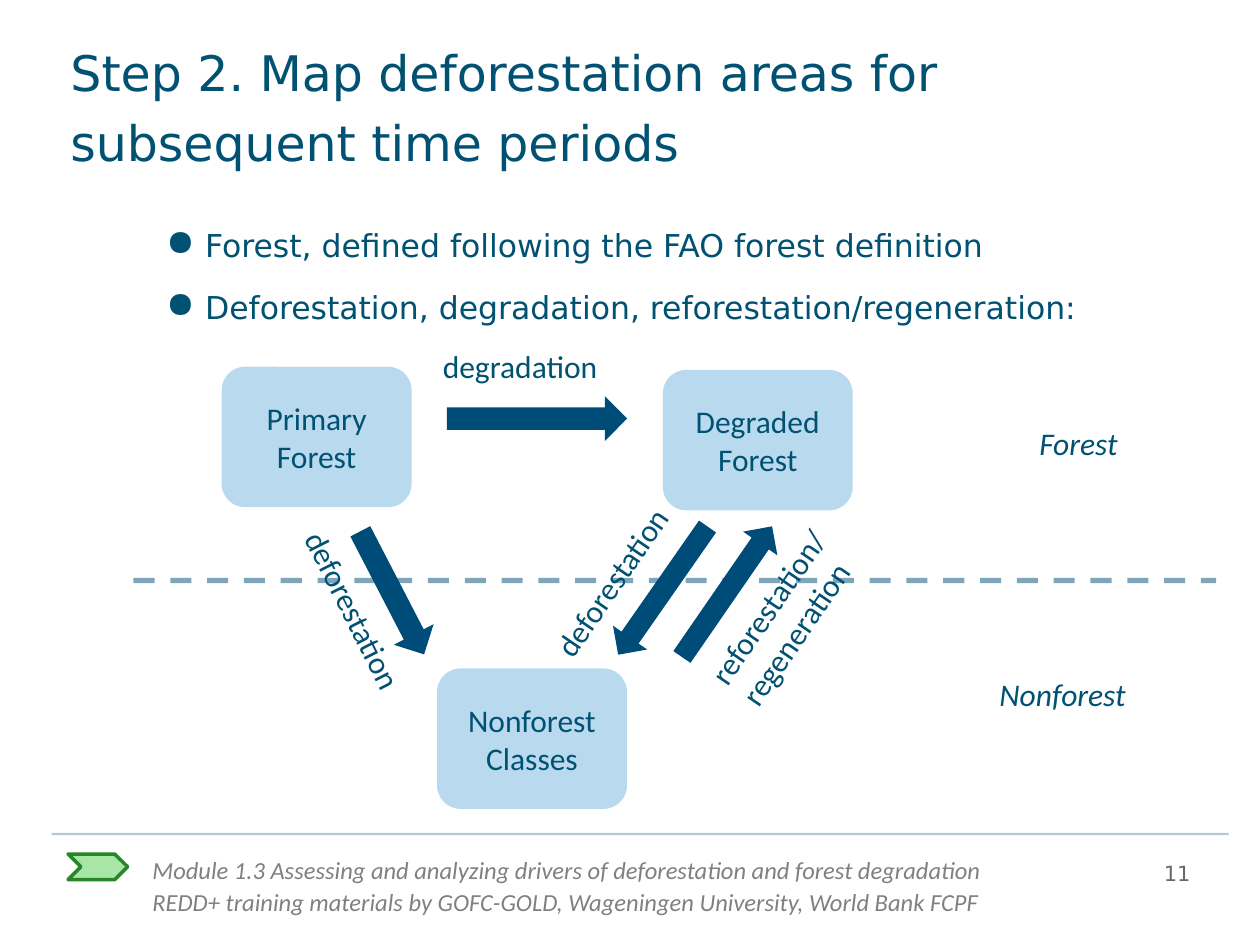
from lxml.etree import SubElement
from pptx import Presentation
from pptx.dml.color import RGBColor
from pptx.enum.dml import MSO_LINE_DASH_STYLE as Dash
from pptx.enum.shapes import MSO_CONNECTOR as Connector, MSO_SHAPE as Shape
from pptx.enum.text import MSO_ANCHOR as Anchor, MSO_AUTO_SIZE as AutoSize, PP_ALIGN as Align
from pptx.oxml.ns import qn
from pptx.util import Pt

TEAL = "005172"
NAVY = "004C78"
SKY = "B9D9EF"
SANS = "DejaVu Sans"


def color(value):
    return RGBColor.from_string(value)


def add_bullet(p, indent, hanging):
    pPr = p._p.get_or_add_pPr()
    pPr.set("marL", str(Pt(indent)))
    pPr.set("indent", str(-Pt(hanging)))
    clr = SubElement(pPr, qn("a:buClr"))
    SubElement(clr, qn("a:srgbClr"), val=TEAL)
    SubElement(pPr, qn("a:buSzPct"), val="115000")
    SubElement(pPr, qn("a:buChar"), char="●")


def write(tf, lines, size=18, font="Calibri", fill=TEAL, italic=False,
          align=Align.LEFT, leading=None, gap=0, bullet=False):
    for i, line in enumerate(lines):
        p = tf.add_paragraph() if i else tf.paragraphs[0]
        p.text = line
        p.alignment = align
        if leading:
            p.line_spacing = Pt(leading)
        if i and gap:
            p.space_before = Pt(gap)
        if bullet:
            add_bullet(p, 77, 22.3)
        for r in p.runs:
            r.font.size = Pt(size)
            r.font.name = font
            r.font.italic = italic
            r.font.color.rgb = color(fill)


def add_text(s, lines, x, y, w, h, wrap=True, rotation=0,
             margins=(7.2, 3.6, 7.2, 3.6), **fmt):
    sp = s.shapes.add_textbox(Pt(x), Pt(y), Pt(w), Pt(h))
    sp.rotation = rotation
    tf = sp.text_frame
    tf.word_wrap = wrap
    tf.auto_size = AutoSize.NONE if wrap else AutoSize.SHAPE_TO_FIT_TEXT
    tf.margin_left, tf.margin_top, tf.margin_right, tf.margin_bottom = map(Pt, margins)
    write(tf, lines, **fmt)


def add_shape(s, kind, x, y, w, h, fill, rotation=0, outline=None):
    sp = s.shapes.add_shape(kind, Pt(x), Pt(y), Pt(w), Pt(h))
    sp.shadow.inherit = False
    sp.rotation = rotation
    sp.fill.solid()
    sp.fill.fore_color.rgb = color(fill)
    if outline:
        sp.line.color.rgb = color(outline)
        sp.line.width = Pt(2)
    else:
        sp.line.fill.background()
    return sp


def add_class_box(s, label, x, y):
    tf = add_shape(s, Shape.ROUNDED_RECTANGLE, x, y, 108.5, 80.2, SKY).text_frame
    tf.word_wrap = True
    tf.vertical_anchor = Anchor.MIDDLE
    write(tf, [label], align=Align.CENTER)


def add_rule(s, x1, x2, y, fill, width, opacity, dash=Dash.SOLID):
    line = s.shapes.add_connector(Connector.STRAIGHT, Pt(x1), Pt(y), Pt(x2), Pt(y))
    line.line.color.rgb = color(fill)
    line.line.width = Pt(width)
    line.line.dash_style = dash
    clr = line.line._ln.find(".//" + qn("a:srgbClr"))
    SubElement(clr, qn("a:alpha"), val=str(opacity * 1000))
    SubElement(line._element.spPr, qn("a:effectLst"))


def add_footer(s):
    add_text(s, ["Module 1.3 Assessing and analyzing drivers of deforestation and forest degradation",
                 "REDD+ training materials by GOFC-GOLD, Wageningen University, World Bank FCPF"],
             80, 484, 556.5, 44, size=14, fill="808080", italic=True, leading=18)
    add_shape(s, Shape.CHEVRON, 38.9, 488, 34, 14.6, "A8E6A8", outline="278626")
    add_text(s, ["11"], 658, 484.6, 44, 24, size=12, font=SANS, fill="706762", leading=18)
    add_rule(s, 29.5, 702, 476.6, TEAL, 1.25, 30)


def add_diagram(s):
    for label, x, y in [("Primary\vForest", 126.7, 209.6),
                        ("Degraded\vForest", 378.8, 211.4),
                        ("Nonforest\vClasses", 249.8, 382)]:
        add_class_box(s, label, x, y)
    add_rule(s, 76.3, 695, 331.7, NAVY, 3, 50, Dash.DASH)
    for label, x, y, w in [("Forest", 586.8, 239, 79.2), ("Nonforest", 564, 382.2, 87)]:
        add_text(s, [label], x, y, w, 29, wrap=False, italic=True)
    for x, y, w, h, angle in [(255.4, 226.4, 103, 25.6, 0),
                              (184.5, 326, 79.2, 25.6, 62.6),
                              (334.1, 325.6, 89.3, 23.8, 124.9),
                              (370.1, 326.2, 90.7, 23.8, 304.6)]:
        add_shape(s, Shape.RIGHT_ARROW, x, y, w, h, NAVY, angle)
    for label, x, y, w, h, angle in [("degradation", 246, 194.6, 103.7, 29, 0),
                                     ("deforestation", 145.4, 334.8, 113.8, 29, 63.1),
                                     ("deforestation", 293, 317.5, 113.8, 29, 304.4),
                                     ("reforestation/\vregeneration", 389.5, 326.9, 117.4, 51, 304.4)]:
        add_text(s, [label], x, y, w, h, wrap=False, rotation=angle)


def main():
    prs = Presentation()
    prs.slide_width, prs.slide_height = Pt(720), Pt(540)
    s = prs.slides.add_slide(prs.slide_layouts[6])
    add_footer(s)
    add_text(s, ["Step 2. Map deforestation areas for subsequent time periods"],
             38.9, 18, 664.6, 106.6, margins=(1.4, 0, 7.2, 25.2),
             size=28, font=SANS, leading=40)
    add_text(s, ["Forest, defined following the FAO forest definition",
                 "Deforestation, degradation, reforestation/regeneration:"],
             33.1, 122.4, 671, 347, font=SANS, leading=25, gap=10, bullet=True)
    add_diagram(s)
    prs.save("out.pptx")


if __name__ == "__main__":
    main()
